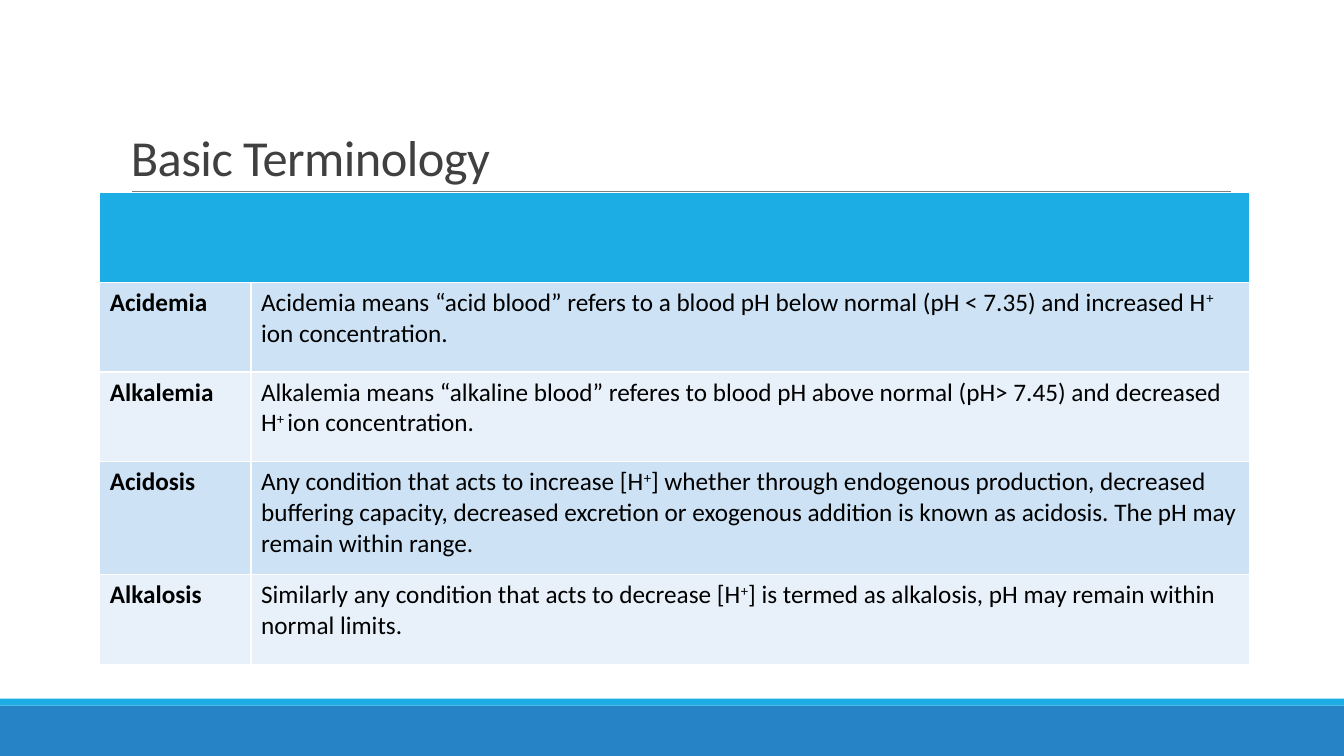
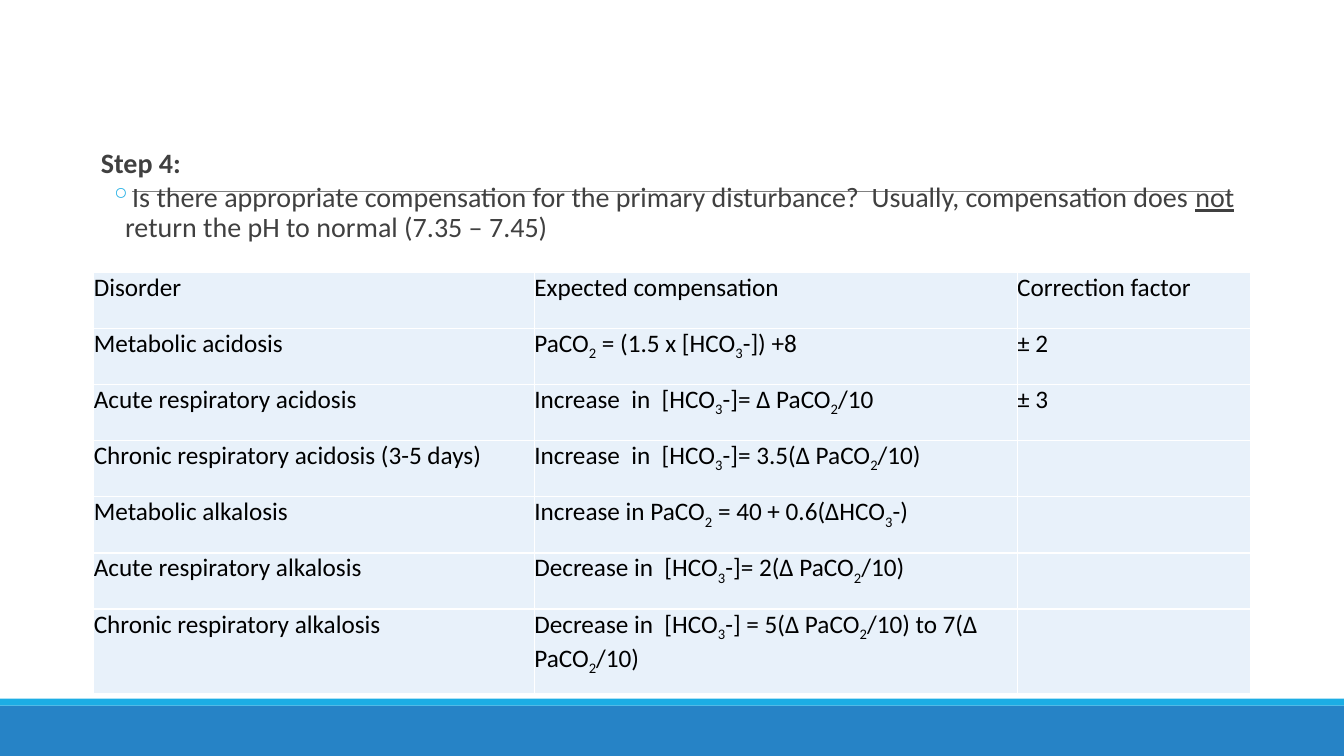
"""Build two slides on acid-base terms and expected compensation."""
from lxml import etree
from pptx import Presentation
from pptx.dml.color import RGBColor
from pptx.enum import shapes, text
from pptx.oxml import ns
from pptx.util import Inches, Pt

BLUE = RGBColor(0x26, 0x83, 0xC6)
SKY = RGBColor(0x1C, 0xAD, 0xE4)
PALE = RGBColor(0xE8, 0xF1, 0xFA)
MIST = RGBColor(0xCD, 0xE3, 0xF5)
GREY = RGBColor(0x80, 0x80, 0x80)
DARK = RGBColor(0x40, 0x40, 0x40)
BLACK = RGBColor(0, 0, 0)
RAISED, LOWERED, LINED = ("baseline", "30000"), ("baseline", "-25000"), ("u", "sng")

deck = Presentation()
deck.slide_width, deck.slide_height = Inches(13.33), Inches(7.5)
COL, ROW = deck.slide_width / 100, deck.slide_height / 100


def area(left, top, width, height):
    return int(left * COL), int(top * ROW), int(width * COL), int(height * ROW)


def write(para, words, size, color, mark=None, bold=False):
    font = para.font
    font.name, font.size, font.bold = "Calibri", Pt(size), bold
    font.color.rgb = color
    for i, part in enumerate(words.split("|")):
        run = para.add_run()
        run.text = part
        if i % 2:
            run.font._element.set(*mark)


slides = []
for page in range(2):
    slide = deck.slides.add_slide(deck.slide_layouts[6])
    for top, height, color in ((93.33, 6.67, BLUE), (92.4, 0.93, SKY)):
        band = slide.shapes.add_shape(
            shapes.MSO_SHAPE.RECTANGLE, *area(0, top, 100, height))
        band.shadow.inherit = False
        band.fill.solid()
        band.fill.fore_color.rgb = color
        band.line.fill.background()
    start, level, end, level = area(9.83, 25.33, 91.6, 25.33)
    rule = slide.shapes.add_connector(
        shapes.MSO_CONNECTOR.STRAIGHT, start, level, end, level)
    rule.line.color.rgb, rule.line.width = GREY, Pt(0.5)
    etree.SubElement(rule._element.spPr, ns.qn("a:effectLst"))
    slides.append(slide)
terms, step = slides

title = terms.shapes.add_textbox(*area(9, 4.13, 82.5, 21.2)).text_frame
title.word_wrap, title.vertical_anchor = True, text.MSO_ANCHOR.BOTTOM
head = title.paragraphs[0]
head.line_spacing = 0.85
write(head, "Basic Terminology", 36, DARK)
head.runs[0].font._element.set("spc", "-40")

body = step.shapes.add_textbox(*area(6.98, 19.07, 86.25, 16)).text_frame
body.word_wrap = True
body.margin_left = body.margin_right = 0
lead, ask = body.paragraphs[0], body.add_paragraph()
for para, before, after, left, hang in (
        (lead, 9, 1.5, 0.07, 0), (ask, 1.5, 3, 0.31, -0.15)):
    para.line_spacing = 0.9
    para.space_before, para.space_after = Pt(before), Pt(after)
    props = para._p.get_or_add_pPr()
    props.set("marL", str(Inches(left)))
    props.set("indent", str(Inches(hang)))
tint = etree.SubElement(ask._p.pPr, ns.qn("a:buClr"))
etree.SubElement(tint, ns.qn("a:srgbClr"), val=str(SKY))
etree.SubElement(ask._p.pPr, ns.qn("a:buChar"), char="◦")
write(lead, "Step 4:", 20, DARK, bold=True)
write(ask, "Is there appropriate compensation for the primary disturbance?  Usually, "
      "compensation does |not| return the pH to normal (7.35 – 7.45)", 20, DARK, LINED)

TERMS = (
    ("", ""),
    ("Acidemia", "Acidemia means “acid blood” refers to a blood pH below normal "
     "(pH < 7.35) and increased H|+ |ion concentration."),
    ("Alkalemia", "Alkalemia means “alkaline blood” referes to blood pH above normal "
     "(pH> 7.45) and decreased H|+ |ion concentration."),
    ("Acidosis", "Any condition that acts to increase [H|+|] whether through endogenous "
     "production, decreased buffering capacity, decreased excretion or exogenous "
     "addition is known as acidosis. The pH may remain within range."),
    ("Alkalosis", "Similarly any condition that acts to decrease [H|+|] is termed as "
     "alkalosis, pH may remain within normal limits."),
)
RULES = (
    ("Disorder", "Expected compensation", "Correction factor"),
    ("Metabolic acidosis", "PaCO|2| = (1.5 x [HCO|3|-]) +8", "± 2"),
    ("Acute respiratory acidosis", "Increase  in  [HCO|3|-]= ∆ PaCO|2|/10", "± 3"),
    ("Chronic respiratory acidosis (3-5 days)",
     "Increase  in  [HCO|3|-]= 3.5(∆ PaCO|2|/10)", ""),
    ("Metabolic alkalosis", "Increase in PaCO|2| = 40 + 0.6(∆HCO|3|-)", ""),
    ("Acute respiratory alkalosis", "Decrease in  [HCO|3|-]= 2(∆ PaCO|2|/10)", ""),
    ("Chronic respiratory alkalosis",
     "Decrease in  [HCO|3|-] = 5(∆ PaCO|2|/10) to 7(∆ PaCO|2|/10)", ""),
)
GRIDS = (
    (terms, TERMS, 7.43, 25.47, (11.25, 74.33), (11.87,) * 3 + (14.93, 11.87),
     (SKY, MIST, PALE, MIST, PALE), RAISED, True),
    (step, RULES, 6.98, 36, (32.78, 35.93, 17.33), (7.43,) * 6 + (11.2,),
     (PALE,) * 7, LOWERED, False),
)
for slide, rows, left, top, widths, heights, fills, mark, banner in GRIDS:
    table = slide.shapes.add_table(
        len(rows), len(widths), *area(left, top, sum(widths), sum(heights))).table
    table.first_row, table.horz_banding = banner, False
    for column, width in zip(table.columns, widths):
        column.width = int(width * COL)
    for row, height, fill, words in zip(table.rows, heights, fills, rows):
        row.height = int(height * ROW)
        for i, (cell, entry) in enumerate(zip(row.cells, words)):
            cell.fill.solid()
            cell.fill.fore_color.rgb = fill
            if not banner:
                cell.margin_left = cell.margin_right = 0
                cell.margin_top = cell.margin_bottom = 0
            if entry:
                write(cell.text_frame.paragraphs[0], entry, 18, BLACK, mark,
                      banner and i == 0)
    if banner:
        table.cell(0, 0).merge(table.cell(0, len(widths) - 1))

deck.save("out.pptx")
